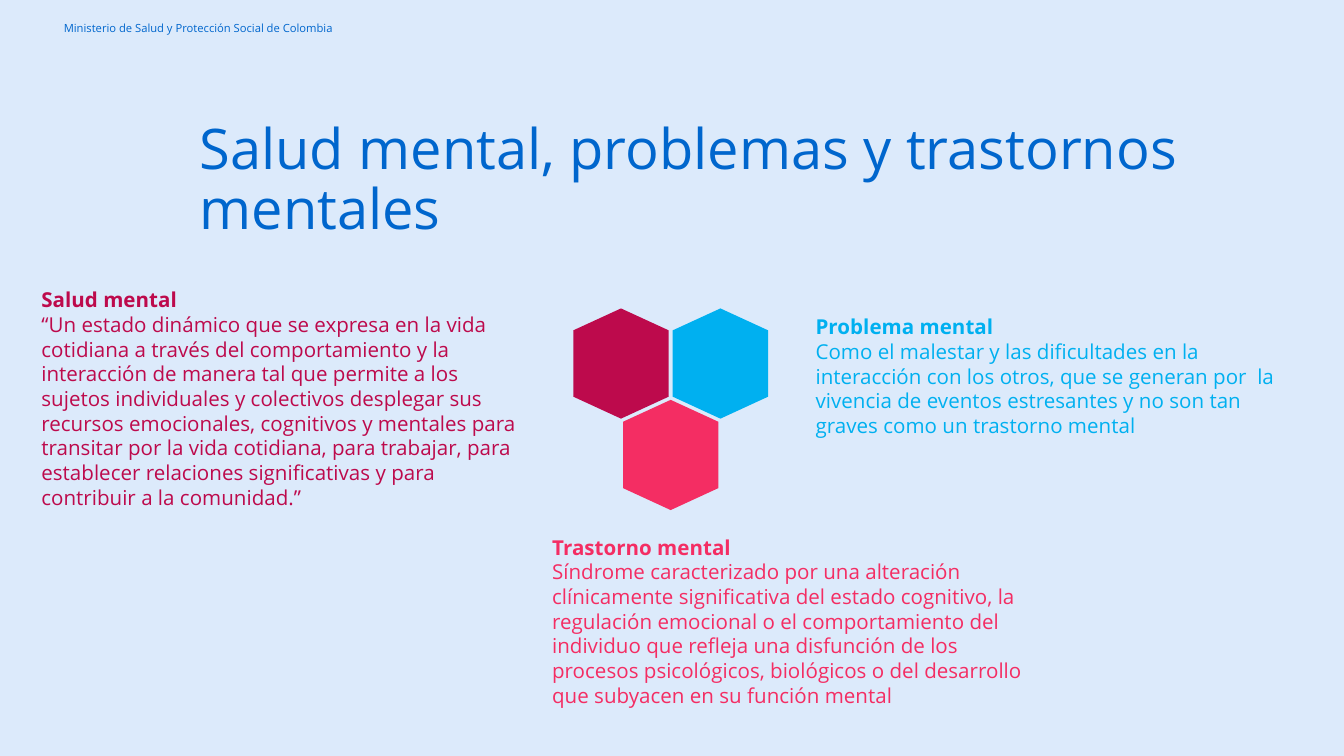
"""Build a slide that sets mental health, problems and disorders around three hexagons."""
from pptx import Presentation
from pptx.dml.color import RGBColor
from pptx.enum.shapes import MSO_SHAPE
from pptx.enum.text import MSO_ANCHOR
from pptx.util import Inches, Pt

HEXAGON = MSO_SHAPE.HEXAGON
TOP, MIDDLE = MSO_ANCHOR.TOP, MSO_ANCHOR.MIDDLE
PALE = RGBColor(0xDC, 0xEA, 0xFB)
BLUE = RGBColor(0x00, 0x66, 0xCD)
WINE = RGBColor(0xBD, 0x0A, 0x4C)
SKY = RGBColor(0x00, 0xB0, 0xF0)
PINK = RGBColor(0xF4, 0x2D, 0x63)
FONT = "Open Sans"

deck = Presentation()
deck.slide_width = Inches(10)
deck.slide_height = deck.slide_width * 9 // 16
COL = deck.slide_width / 100
ROW = deck.slide_height / 56.25
slide = deck.slides.add_slide(deck.slide_layouts[6])
slide.background.fill.solid()
slide.background.fill.fore_color.rgb = PALE


def write(*lines, box, size, color, head=False, anchor=TOP, pad=(1, 0.5), space=1):
    left, top, width, height = box
    area = slide.shapes.add_textbox(
        round(left * COL), round(top * ROW), round(width * COL), round(height * ROW))
    frame = area.text_frame
    frame.word_wrap = True
    frame.vertical_anchor = anchor
    frame.margin_left = frame.margin_right = round(pad[0] * COL)
    frame.margin_top = frame.margin_bottom = round(pad[1] * ROW)
    for i, line in enumerate(lines):
        para = frame.paragraphs[0] if i == 0 else frame.add_paragraph()
        para.line_spacing = space
        run = para.add_run()
        run.text = line
        font = run.font
        font.name, font.size, font.bold = FONT, Pt(size), head and i == 0
        font.color.rgb = color


write("Ministerio de Salud y Protección Social de Colombia",
      box=(4, 1.1, 23.4, 2), size=6, color=BLUE, anchor=MIDDLE, pad=(0.75, 0.38))
write("Salud mental, problemas y trastornos mentales",
      box=(14.1, 10, 78.1, 7), size=30, color=BLUE, anchor=MIDDLE,
      pad=(0.75, 0.38), space=0.9)

topics = [
    ("Salud mental",
     "“Un estado dinámico que se expresa en la vida cotidiana a través del "
     "comportamiento y la interacción de manera tal que permite a los sujetos "
     "individuales y colectivos desplegar sus recursos emocionales, cognitivos y "
     "mentales para transitar por la vida cotidiana, para trabajar, para establecer "
     "relaciones significativas y para contribuir a la comunidad.”",
     (2.1, 20.9, 38, 17.7), WINE),
    ("Problema mental",
     "Como el malestar y las dificultades en la interacción con los otros, que se "
     "generan por  la vivencia de eventos estresantes y no son tan graves como un "
     "trastorno mental",
     (59.7, 22.9, 38.2, 10.3), SKY),
    ("Trastorno mental",
     "Síndrome caracterizado por una alteración clínicamente significativa del estado "
     "cognitivo, la regulación emocional o el comportamiento del individuo que refleja "
     "una disfunción de los procesos psicológicos, biológicos o del desarrollo que "
     "subyacen en su función mental",
     (40.1, 39.3, 38.2, 14), PINK),
]
for name, body, box, color in topics:
    write(name, body, box=box, size=11, color=color, head=True)

LONG, SHORT = 8.2, 7.1
STEP, DROP = 7.4, 6.8
for across, down, color in [(0.5, 1, PINK), (1, 0, SKY), (0, 0, WINE)]:
    cell = slide.shapes.add_shape(
        HEXAGON, round((42.1 + across * STEP) * COL), round((23.5 + down * DROP) * ROW),
        round(LONG * COL), round(SHORT * ROW))
    cell.adjustments[0] = 0.23
    cell.rotation = 90
    cell.shadow.inherit = False
    cell.fill.solid()
    cell.fill.fore_color.rgb = color
    cell.line.fill.background()

deck.save("out.pptx")
